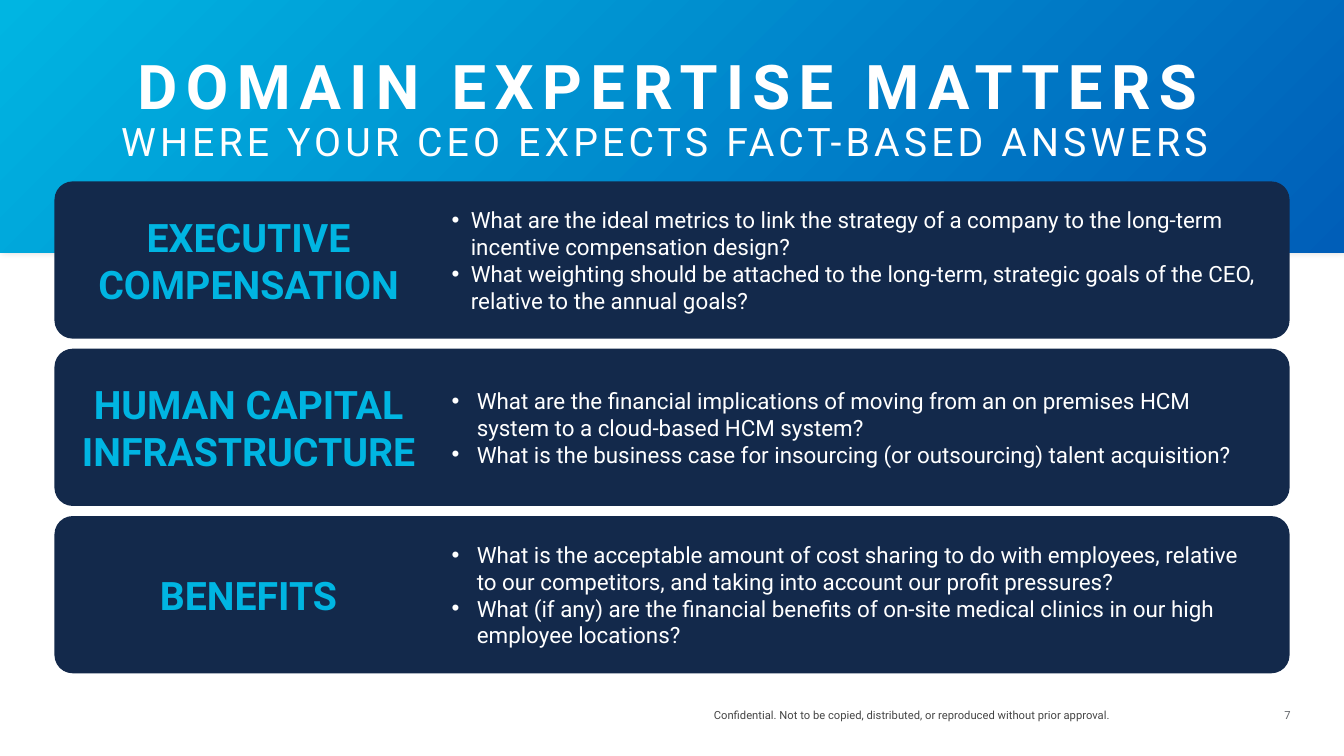
from dataclasses import dataclass

from lxml.etree import SubElement
from pptx import Presentation
from pptx.dml.color import RGBColor
from pptx.enum.shapes import MSO_SHAPE as Shape
from pptx.enum.text import MSO_ANCHOR as Anchor, PP_ALIGN as Align
from pptx.oxml import parse_xml
from pptx.oxml.ns import nsdecls, qn
from pptx.util import Inches, Pt


@dataclass(frozen=True)
class Theme:
    font: str = "Roboto"
    cyan: str = "00B5E2"
    blue: str = "005EB8"
    navy: str = "13294B"
    white: str = "FFFFFF"
    footer: str = "454545"
    number: str = "63666A"
    title_size: int = 44
    heading_size: int = 28
    body_size: int = 16
    small_size: int = 8


class SlideBuilder:
    """Draws styled elements on the current slide."""

    def __init__(self, presentation, theme):
        self.theme = theme
        self.slide = presentation.slides.add_slide(presentation.slide_layouts[5])

    def style(self, run, size, color, bold=False, spacing=0):
        run.font.name = self.theme.font
        run.font.size = Pt(size)
        run.font.bold = bold
        run.font.color.rgb = RGBColor.from_string(color)
        if spacing:
            run._r.get_or_add_rPr().set("spc", str(spacing * 100))

    def frame(self, shape, anchor):
        text_frame = shape.text_frame
        text_frame.word_wrap = True
        text_frame.vertical_anchor = anchor
        text_frame.margin_left = text_frame.margin_right = 0
        text_frame.margin_top = text_frame.margin_bottom = 0
        return text_frame

    def box(self, kind, left, top, width, height, color):
        shape = self.slide.shapes.add_shape(
            kind, Inches(left), Inches(top), Inches(width), Inches(height))
        shape.shadow.inherit = False
        shape.fill.solid()
        shape.fill.fore_color.rgb = RGBColor.from_string(color)
        shape.line.fill.background()
        return shape

    def banner(self, width, height):
        shape = self.box(Shape.RECTANGLE, 0, 0, width, height, self.theme.blue)
        properties = shape._element.spPr
        gradient = parse_xml(
            f'<a:gradFill {nsdecls("a")} rotWithShape="1"><a:gsLst>'
            f'<a:gs pos="0"><a:srgbClr val="{self.theme.cyan}"/></a:gs>'
            f'<a:gs pos="100000"><a:srgbClr val="{self.theme.blue}"/></a:gs>'
            '</a:gsLst><a:path path="circle">'
            '<a:fillToRect r="100000" b="100000"/></a:path></a:gradFill>')
        properties.replace(properties.find(qn("a:solidFill")), gradient)
        shadow = SubElement(properties.find(qn("a:effectLst")), qn("a:outerShdw"),
                            blurRad=str(Pt(5)), dist="0", dir="0")
        color = SubElement(shadow, qn("a:srgbClr"), val="000000")
        SubElement(color, qn("a:alpha"), val="15000")
        self.slide.shapes._spTree.insert(2, shape._element)

    def title(self, left, top, width, height, headline, subtitle):
        shape = self.slide.shapes.title
        shape.left, shape.top = Inches(left), Inches(top)
        shape.width, shape.height = Inches(width), Inches(height)
        text_frame = self.frame(shape, Anchor.TOP)
        text_frame.text = f"{headline}\v{subtitle}"
        paragraph = text_frame.paragraphs[0]
        paragraph.alignment = Align.CENTER
        paragraph.line_spacing = 0.9
        theme = self.theme
        self.style(paragraph.runs[0], theme.title_size, theme.white, True, 6)
        self.style(paragraph.runs[1], theme.heading_size, theme.white, False, 3)

    def text(self, left, top, width, height, lines, size, color, bold=False,
             align=Align.LEFT, anchor=Anchor.MIDDLE, indent=0):
        shape = self.slide.shapes.add_textbox(
            Inches(left), Inches(top), Inches(width), Inches(height))
        text_frame = self.frame(shape, anchor)
        text_frame.text = "\n".join(lines)
        for paragraph in text_frame.paragraphs:
            paragraph.alignment = align
            self.style(paragraph.runs[0], size, color, bold)
            if indent:
                self.bullet(paragraph, indent)

    def bullet(self, paragraph, indent):
        properties = paragraph._p.get_or_add_pPr()
        properties.set("marL", str(Inches(indent)))
        properties.set("indent", str(-Inches(indent)))
        SubElement(properties, qn("a:buFont"), typeface="Arial")
        SubElement(properties, qn("a:buChar"), char="•")

    def card(self, left, top, width, height, heading, questions, indent):
        theme = self.theme
        panel = self.box(Shape.ROUNDED_RECTANGLE, left, top, width, height, theme.navy)
        panel.adjustments[0] = 0.116
        self.text(left + 0.19, top, 3.47, height, [heading], theme.heading_size,
                  theme.cyan, bold=True, align=Align.CENTER)
        self.text(left + 3.94, top, 8.03, height, questions, theme.body_size,
                  theme.white, indent=indent)


CARDS = [
    ("EXECUTIVE COMPENSATION", 0.19, [
        "What are the ideal metrics to link the strategy of a company to the "
        "long-term incentive compensation design?",
        "What weighting should be attached to the long-term, strategic goals of "
        "the CEO, relative to the annual goals?"]),
    ("HUMAN CAPITAL INFRASTRUCTURE", 0.25, [
        "What are the financial implications of moving from an on premises HCM "
        "system to a cloud-based HCM system?",
        "What is the business case for insourcing (or outsourcing) talent "
        "acquisition?"]),
    ("BENEFITS", 0.25, [
        "What is the acceptable amount of cost sharing to do with employees, "
        "relative to our competitors, and taking into account our profit pressures?",
        "What (if any) are the financial benefits of on-site medical clinics in "
        "our high employee locations?"]),
]


def main():
    presentation = Presentation()
    presentation.slide_width, presentation.slide_height = Inches(13.33), Inches(7.5)
    theme = Theme()
    builder = SlideBuilder(presentation, theme)
    left, width = 0.54, 12.25
    builder.banner(13.33, 2.51)
    builder.title(left, 0.56, width, 1, "DOMAIN EXPERTISE MATTERS",
                  "WHERE YOUR CEO EXPECTS FACT-BASED ANSWERS ")
    for row, (heading, indent, questions) in enumerate(CARDS):
        builder.card(left, 1.8 + row * 1.66, width, 1.56, heading, questions, indent)
    builder.text(7.08, 7.03, 4.97, 0.2,
                 ["Confidential. Not to be copied, distributed, or reproduced "
                  "without prior approval."],
                 theme.small_size, theme.footer, anchor=Anchor.TOP)
    builder.text(12.44, 7.03, 0.36, 0.2, ["7"], theme.small_size, theme.number,
                 align=Align.RIGHT, anchor=Anchor.TOP)
    presentation.save("out.pptx")


if __name__ == "__main__":
    main()
